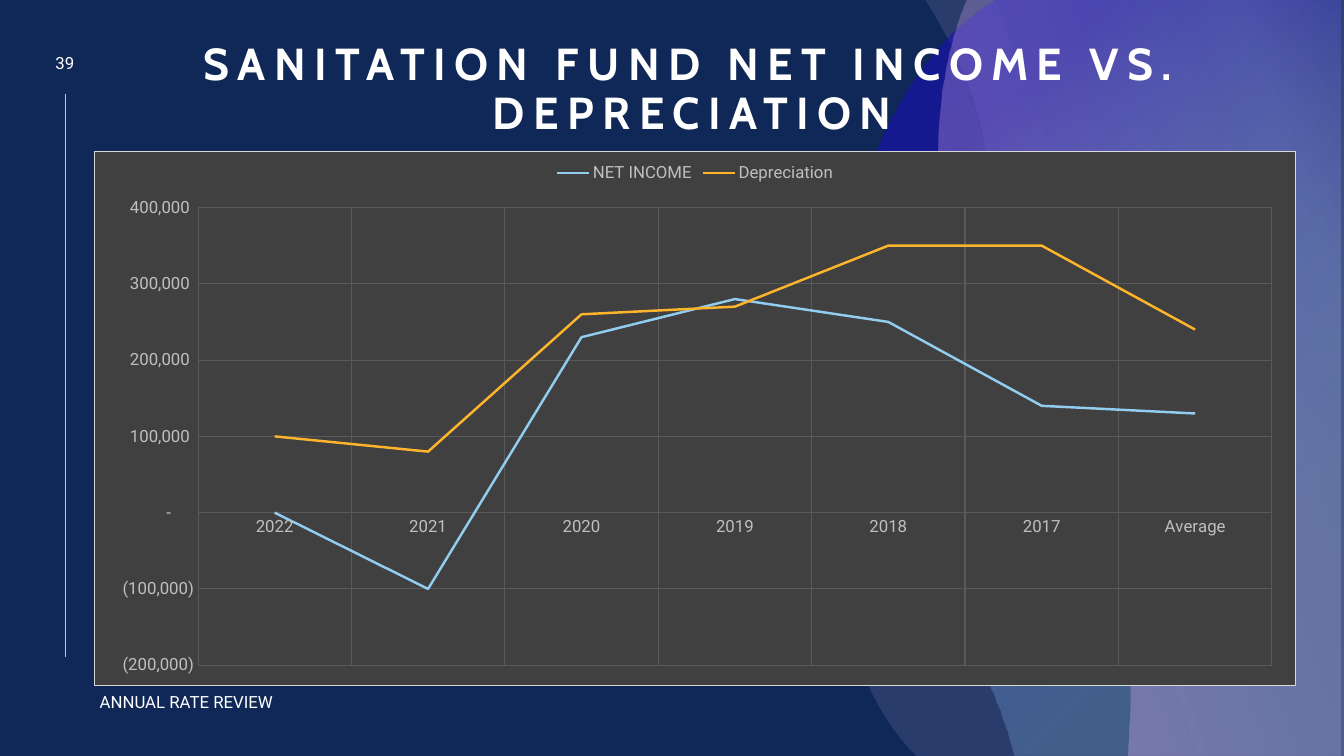
from lxml import etree
from pptx import Presentation
from pptx.chart.data import CategoryChartData
from pptx.dml.color import RGBColor
from pptx.enum.chart import XL_CHART_TYPE, XL_LEGEND_POSITION, XL_MARKER_STYLE, XL_TICK_MARK
from pptx.enum.shapes import MSO_CONNECTOR
from pptx.enum.text import MSO_ANCHOR, MSO_AUTO_SIZE, PP_ALIGN
from pptx.oxml import parse_xml
from pptx.oxml.ns import nsdecls, qn
from pptx.util import Pt

LINE_CHART, LEGEND_TOP = XL_CHART_TYPE.LINE, XL_LEGEND_POSITION.TOP
NO_MARKER, NO_TICK = XL_MARKER_STYLE.NONE, XL_TICK_MARK.NONE
STRAIGHT, NO_AUTOFIT = MSO_CONNECTOR.STRAIGHT, MSO_AUTO_SIZE.NONE
MIDDLE, BOTTOM = MSO_ANCHOR.MIDDLE, MSO_ANCHOR.BOTTOM
LEFT, CENTER = PP_ALIGN.LEFT, PP_ALIGN.CENTER

NAVY = RGBColor(0x10, 0x28, 0x57)
WHITE = RGBColor(0xFF, 0xFF, 0xFF)
PINK = RGBColor(0xF6, 0xA6, 0xF4)
LILAC = RGBColor(0xC3, 0xB9, 0xF2)
SKY = RGBColor(0x92, 0xCD, 0xF0)
INDIGO = RGBColor(0x18, 0x0D, 0xC2)
AMBER = RGBColor(0xFE, 0xB5, 0x2B)
CHARCOAL = RGBColor(0x40, 0x40, 0x40)
GRID_GREY = RGBColor(0x59, 0x59, 0x59)
LABEL_GREY = RGBColor(0xBF, 0xBF, 0xBF)
BORDER_GREY = RGBColor(0xD9, 0xD9, 0xD9)

# Content
TITLE = "SANITATION FUND NET INCOME VS. DEPRECIATION"
TITLE_BOX = (46.5, 19, 896.4, 84)
SMALL_TEXTS = [
    ("39", (25.9, 32.4, 41, 24.5), CENTER),
    ("ANNUAL RATE REVIEW", (64.1, 490.3, 183.6, 21.6), LEFT),
]
SIDE_RULE = (46.8, 67, 46.8, 469.4)
CHART_BOX = (67, 108, 859, 382.3)
PERIODS = ["2022", "2021", "2020", "2019", "2018", "2017", "Average"]
SERIES = [
    ("NET INCOME", SKY, (0, -100000, 230000, 280000, 250000, 140000, 130000)),
    ("Depreciation", AMBER, (100000, 80000, 260000, 270000, 350000, 350000, 240000)),
]
AXIS_FORMAT = '_(* #,##0_);_(* \\(#,##0\\);_(* "-"??_);_('

# Backdrop waves: a pair is a corner, six numbers are a Bezier curve.
# Gradient stops are (position %, colour, opacity %).
WAVES = [
    ([(661, 0), (960, 0), (960, 540), (654.5, 540), (653.8, 539.3),
      (626.4, 511.2, 603.4, 466.6, 604.1, 409),
      (604.8, 307.4, 705.6, 263.5, 707.8, 154.8),
      (709.2, 87.1, 684, 37.4, 662.4, 2.2)],
     [(0, LILAC, 14)], ""),
    ([(711.4, 0), (957.6, 0), (957.6, 540), (724.3, 540), (720.7, 526.3),
      (688.3, 419.8, 604.8, 354.2, 604.1, 231.8),
      (603.4, 118.8, 654.5, 39.6, 700.6, 7.2)],
     [(24, SKY, 24), (79, INDIGO, 52)],
     '<a:path path="circle"><a:fillToRect l="100000" t="100000"/></a:path>'),
    ([(690.5, 0), (960, 0), (960, 540), (805, 540), (806.4, 519.1),
      (807.1, 509.8, 807.1, 499.7, 807.1, 490.3),
      (804.2, 329.8, 671, 265, 670.3, 114.5),
      (669.6, 76.3, 675.4, 42.5, 685.4, 13)],
     [(1, PINK, 38), (84, LILAC, 20), (100, PINK, 3)],
     '<a:lin ang="20400000" scaled="0"/>'),
]


def points(numbers):
    return [Pt(number) for number in numbers]


def wave_fill(stops, direction):
    """One stop gives a plain fill, several give a gradient."""
    colors = [f'<a:srgbClr val="{color}"><a:alpha val="{opacity * 1000}"/></a:srgbClr>'
              for _, color, opacity in stops]
    if len(stops) == 1:
        return parse_xml(f'<a:solidFill {nsdecls("a")}>{colors[0]}</a:solidFill>')
    stop_xml = "".join(f'<a:gs pos="{stop[0] * 1000}">{color}</a:gs>'
                       for stop, color in zip(stops, colors))
    return parse_xml(f'<a:gradFill {nsdecls("a")} rotWithShape="1">'
                     f'<a:gsLst>{stop_xml}</a:gsLst>{direction}</a:gradFill>')


def add_wave(shapes, segments, stops, direction):
    first, *others = segments
    builder = shapes.build_freeform(*points(first), scale=1.0)
    for segment in others:
        pairs = zip(segment[::2], segment[1::2])
        builder.add_line_segments([points(pair) for pair in pairs], close=False)
    wave = builder.convert_to_shape()
    wave.shadow.inherit = False
    wave.line.fill.background()
    wave.fill.background()
    properties = wave._element.spPr
    properties.replace(properties.find(qn("a:noFill")), wave_fill(stops, direction))

    # Join the three lines of each curve into one Bezier segment
    outline = properties.find(".//" + qn("a:path"))
    lines = iter(outline.findall(qn("a:lnTo")))
    for segment in others:
        parts = [next(lines) for _ in range(len(segment) // 2)]
        if len(parts) == 3:
            curve = etree.Element(qn("a:cubicBezTo"))
            parts[0].addprevious(curve)
            for part in parts:
                curve.append(part[0])
                outline.remove(part)
    etree.SubElement(outline, qn("a:close"))


def set_font(font, name, size, color):
    font.name, font.size = name, Pt(size)
    font.color.rgb = color


def add_small_text(shapes, text, box, alignment):
    frame = shapes.add_textbox(*points(box)).text_frame
    frame.word_wrap = True
    frame.vertical_anchor = MIDDLE
    paragraph = frame.paragraphs[0]
    paragraph.text = text
    paragraph.alignment = alignment
    paragraph.space_after = Pt(6)
    set_font(paragraph.font, "Roboto", 12, WHITE)


def add_fund_chart(shapes):
    data = CategoryChartData()
    data.categories = PERIODS
    for name, _, values in SERIES:
        data.add_series(name, values)
    chart = shapes.add_chart(LINE_CHART, *points(CHART_BOX), data).chart
    chart.has_title = False
    set_font(chart.font, "Roboto", 12, LABEL_GREY)
    chart.has_legend = True
    chart.legend.position = LEGEND_TOP
    chart.legend.include_in_layout = False
    set_font(chart.legend.font, "Roboto", 12, LABEL_GREY)

    plot = chart.plots[0]
    plot.vary_by_categories = False
    for series, (_, color, _) in zip(plot.series, SERIES):
        series.smooth = False
        series.marker.style = NO_MARKER
        series.format.line.color.rgb = color
        series.format.line.width = Pt(1.75)

    for axis in (chart.category_axis, chart.value_axis):
        axis.major_tick_mark = axis.minor_tick_mark = NO_TICK
        axis.has_major_gridlines = True
        grid = axis.major_gridlines.format.line
        grid.color.rgb, grid.width = GRID_GREY, Pt(0.75)
        axis.format.line.fill.background()
        set_font(axis.tick_labels.font, "Roboto", 12, LABEL_GREY)
    amounts = chart.value_axis
    amounts.minimum_scale, amounts.maximum_scale = -200000, 400000
    amounts.major_unit = 100000
    amounts.tick_labels.number_format = AXIS_FORMAT
    amounts.tick_labels.number_format_is_linked = False

    # Chart panel fill and border
    chart._chartSpace.find(qn("c:chart")).addnext(parse_xml(
        f'<c:spPr {nsdecls("c", "a")}>'
        f'<a:solidFill><a:srgbClr val="{CHARCOAL}"/></a:solidFill>'
        f'<a:ln w="{Pt(0.75)}"><a:solidFill><a:srgbClr val="{BORDER_GREY}"/>'
        f'</a:solidFill></a:ln></c:spPr>'))


def main():
    deck = Presentation()
    deck.slide_width, deck.slide_height = Pt(960), Pt(540)
    slide = deck.slides.add_slide(deck.slide_layouts[5])
    shapes = slide.shapes
    title = shapes.title

    # Backdrop
    slide.background.fill.solid()
    slide.background.fill.fore_color.rgb = NAVY
    rule = shapes.add_connector(STRAIGHT, *points(SIDE_RULE))
    rule.line.color.rgb, rule.line.width = PINK, Pt(0.5)
    etree.SubElement(rule._element.spPr, qn("a:effectLst"))
    for wave in WAVES:
        add_wave(shapes, *wave)

    # Page number and footer
    for small_text in SMALL_TEXTS:
        add_small_text(shapes, *small_text)

    # Title, brought in front of the backdrop
    shapes._spTree.append(title._element)
    title.left, title.top, title.width, title.height = points(TITLE_BOX)
    frame = title.text_frame
    frame.word_wrap, frame.auto_size = True, NO_AUTOFIT
    frame.vertical_anchor = BOTTOM
    heading = frame.paragraphs[0]
    heading.text = TITLE
    heading.alignment, heading.line_spacing = CENTER, 0.9
    set_font(heading.font, "Cabin", 32, WHITE)
    heading.font.bold = True
    heading.runs[0].font._element.set("spc", "600")

    add_fund_chart(shapes)
    deck.save("out.pptx")


if __name__ == "__main__":
    main()
